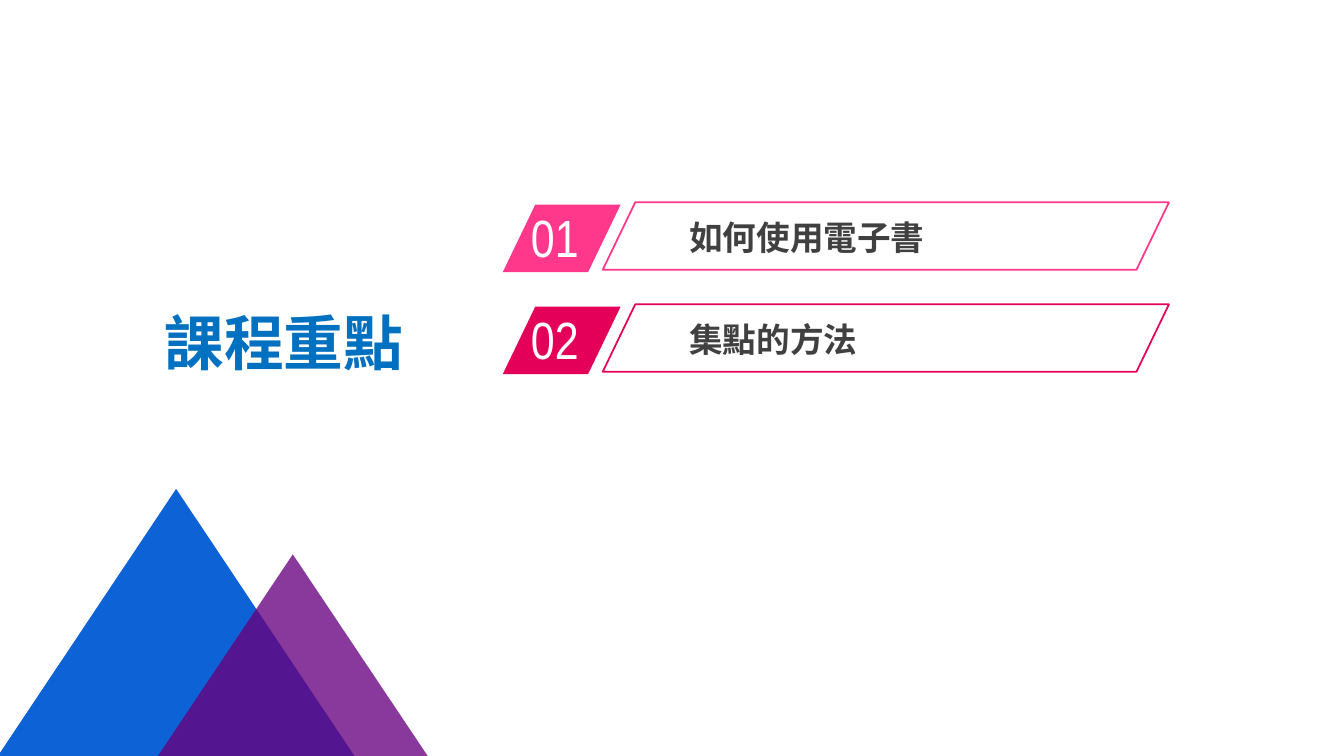
import pptx
import pptx.util
import pptx.dml.color
import pptx.enum.shapes
import pptx.enum.text
import pptx.oxml.ns
from lxml import etree

Cm, Pt = pptx.util.Cm, pptx.util.Pt
SHAPE = pptx.enum.shapes.MSO_SHAPE
CJK = "Noto Sans CJK SC"


def paint(target, color, alpha=None):
    """Give a fill, line or font format a solid colour."""
    fill = target if hasattr(target, "solid") else target.fill
    fill.solid()
    fill.fore_color.rgb = pptx.dml.color.RGBColor.from_string(color)
    if alpha is not None:
        clr = fill._xPr.find(".//" + pptx.oxml.ns.qn("a:srgbClr"))
        etree.SubElement(clr, pptx.oxml.ns.qn("a:alpha"), val=str(alpha * 1000))


def add_text(shapes, box, text, color, **font):
    """Add a one-line text box and return its text frame."""
    tf = shapes.add_textbox(*map(Cm, box)).text_frame
    tf.word_wrap = True
    r = tf.paragraphs[0].add_run()
    r.text = text
    for name, value in font.items():
        setattr(r.font, name, value)
    paint(r.font, color)
    etree.SubElement(r.font._element, pptx.oxml.ns.qn("a:ea"), typeface=font["name"])
    return tf


prs = pptx.Presentation()
prs.slide_width, prs.slide_height = Cm(33.87), Cm(19.05)
s = prs.slides.add_slide(prs.slide_layouts[6])

# Title
tf = add_text(s.shapes, (2.97, 7.7, 8.36, 1.83), "課程重點", "0070C0",
              name=CJK, size=Pt(42.6), bold=True)
tf.vertical_anchor = pptx.enum.text.MSO_ANCHOR.MIDDLE
tf.paragraphs[0].alignment = pptx.enum.text.PP_ALIGN.CENTER

# Agenda rows: a numbered badge and an outlined bar
topics = [("如何使用電子書", "FF388C"), ("集點的方法", "E40059")]
for i, (topic, color) in enumerate(topics):
    top = 5.1 + i * 2.57

    badge = s.shapes.add_group_shape().shapes
    sp = badge.add_shape(SHAPE.PARALLELOGRAM, Cm(12.67), Cm(top + 0.06), Cm(2.97), Cm(1.7))
    sp.adjustments[0] = 0.482
    sp.shadow.inherit = False
    paint(sp.fill, color)
    sp.line.fill.background()
    add_text(badge, (13.13, top - 0.05, 2.84, 1.85), f"{i + 1:02}", "FFFFFF",
             name="Arial Narrow", size=Pt(37.4))

    bar = s.shapes.add_group_shape().shapes
    add_text(bar, (17.12, top + 0.25, 10.46, 1.27), topic, "404040",
             name=CJK, size=Pt(24), bold=True)
    sp = bar.add_shape(SHAPE.PARALLELOGRAM, Cm(15.19), Cm(top), Cm(14.27), Cm(1.7))
    sp.adjustments[0] = 0.482
    sp.shadow.inherit = False
    sp.fill.background()
    paint(sp.line, color)
    sp.line.width = Pt(1.25)

# Corner triangles
triangles = [((-0.36, 12.32, 9.6, 7.19), "005BD3", 95),
             ((3.76, 13.97, 7.24, 5.41), "68007F", 78)]
for box, color, alpha in triangles:
    sp = s.shapes.add_shape(SHAPE.ISOSCELES_TRIANGLE, *map(Cm, box))
    sp.shadow.inherit = False
    paint(sp.fill, color, alpha)
    sp.line.fill.background()

prs.save("out.pptx")
